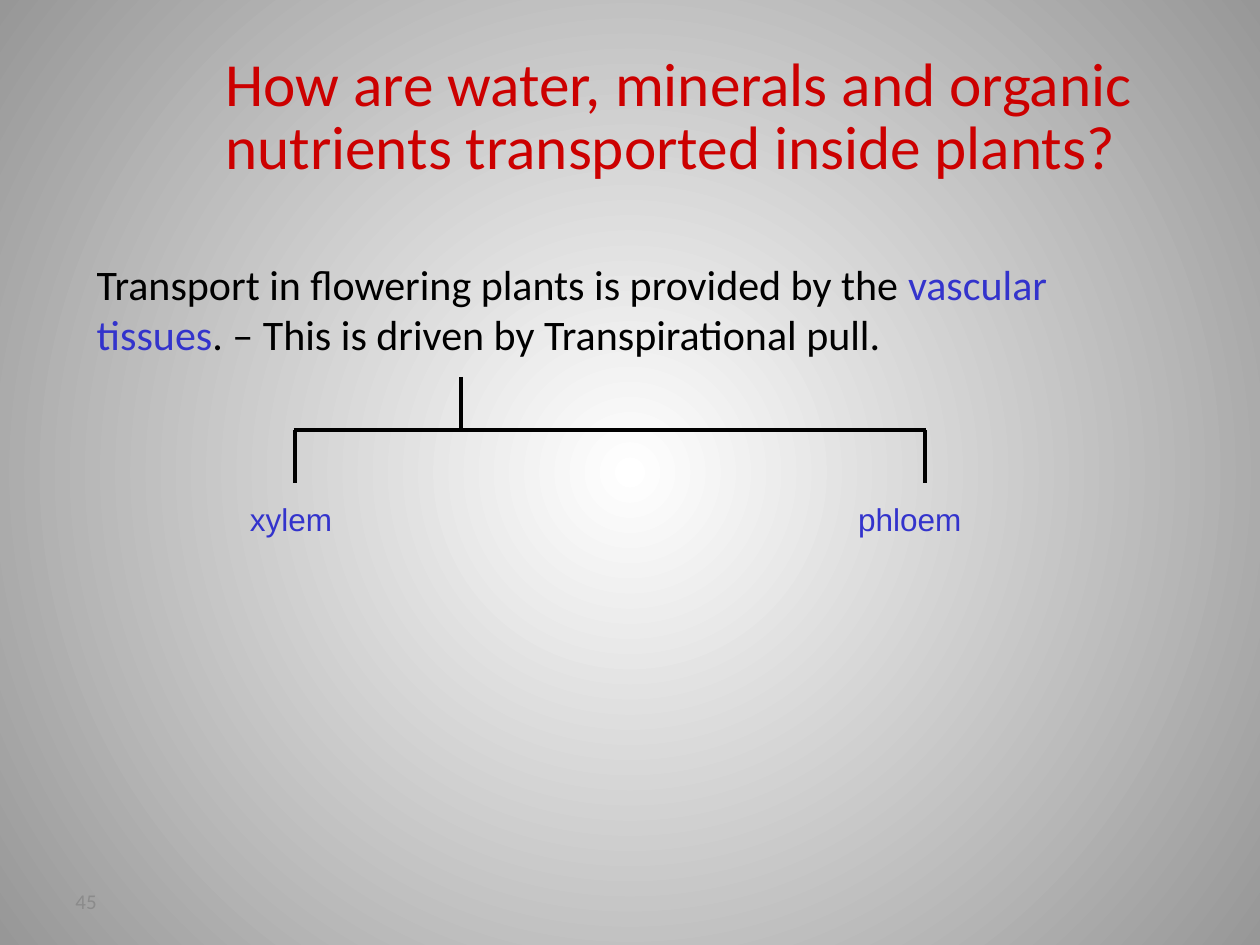
"""Build the slide on transport of water, minerals and nutrients in plants."""
from lxml import etree
from pptx import Presentation
from pptx.dml.color import RGBColor
from pptx.enum.shapes import MSO_CONNECTOR
from pptx.enum.text import MSO_ANCHOR, MSO_AUTO_SIZE as AUTO, PP_ALIGN as ALIGN
from pptx.oxml.ns import qn
from pptx.util import Pt


def color(value):
    return RGBColor.from_string(value)


def add_text(runs, left, top, width, height, size, font="Calibri", wrap=True,
             align=ALIGN.LEFT, anchor=MSO_ANCHOR.TOP, spacing=None, hanging=0,
             fit=AUTO.SHAPE_TO_FIT_TEXT):
    frame = slide.shapes.add_textbox(Pt(left), Pt(top), Pt(width), Pt(height)).text_frame
    frame.word_wrap = wrap
    frame.auto_size = fit
    frame.vertical_anchor = anchor
    paragraph = frame.paragraphs[0]
    paragraph.alignment = align
    paragraph.line_spacing = spacing
    if hanging:
        properties = paragraph._p.get_or_add_pPr()
        properties.set("marL", str(Pt(hanging)))
        properties.set("indent", str(-Pt(hanging)))
    for words, hue in runs:
        run = paragraph.add_run()
        run.text = words
        run.font.name = font
        run.font.size = Pt(size)
        run.font.color.rgb = color(hue)


BLACK, BLUE, RED, GREY = "000000", "3333CC", "CC0000", "8B8B8B"

prs = Presentation()
prs.slide_width, prs.slide_height = Pt(720), Pt(540)
slide = prs.slides.add_slide(prs.slide_layouts[6])

backdrop = slide.background.fill
backdrop.gradient()
for stop, hue in zip(backdrop.gradient_stops, ("FFFFFF", "979797")):
    stop.color.rgb = color(hue)
gradient = slide.element.find(".//" + qn("a:gradFill"))
gradient.remove(gradient.find(qn("a:lin")))
glow = etree.SubElement(gradient, qn("a:path"), {"path": "circle"})
etree.SubElement(glow, qn("a:fillToRect"), {side: "50000" for side in "ltrb"})

add_text([("\tHow are water, minerals and organic nutrients transported inside plants?", RED)],
         38.9, 28.8, 689.8, 78.5, 35, spacing=0.85, hanging=82.8)
add_text([("Transport in flowering plants is provided by the ", BLACK),
          ("vascular tissues", BLUE),
          (". – This is driven by Transpirational pull.", BLACK)],
         48.2, 144, 606.2, 65.5, 24)

bar_y, drop = 245.7, 30.3
xylem_x, phloem_x, stem_x = 168.5, 528.5, 263.5
bracket = slide.shapes.add_group_shape()
for x1, y1, x2, y2 in (
    (xylem_x - 0.7, bar_y, phloem_x + 0.7, bar_y),
    (xylem_x, bar_y, xylem_x, bar_y + drop),
    (phloem_x, bar_y, phloem_x, bar_y + drop),
    (stem_x, bar_y - drop, stem_x, bar_y),
):
    branch = bracket.shapes.add_connector(
        MSO_CONNECTOR.STRAIGHT, Pt(x1), Pt(y1), Pt(x2), Pt(y2))
    branch.line.color.rgb = color(BLACK)
    branch.line.width = Pt(2.25)
    etree.SubElement(branch._element.spPr, qn("a:effectLst"))

for tissue, left, width in (("xylem", 113.8, 105.1), ("phloem", 455.8, 128.2)):
    add_text([(tissue, BLUE)], left, 282.2, width, 45.4, 18,
             font="Arial", wrap=False, align=ALIGN.CENTER)

add_text([("45", GREY)], 36, 500.5, 168, 28.75, 12,
         anchor=MSO_ANCHOR.MIDDLE, fit=AUTO.NONE)

prs.save("out.pptx")
